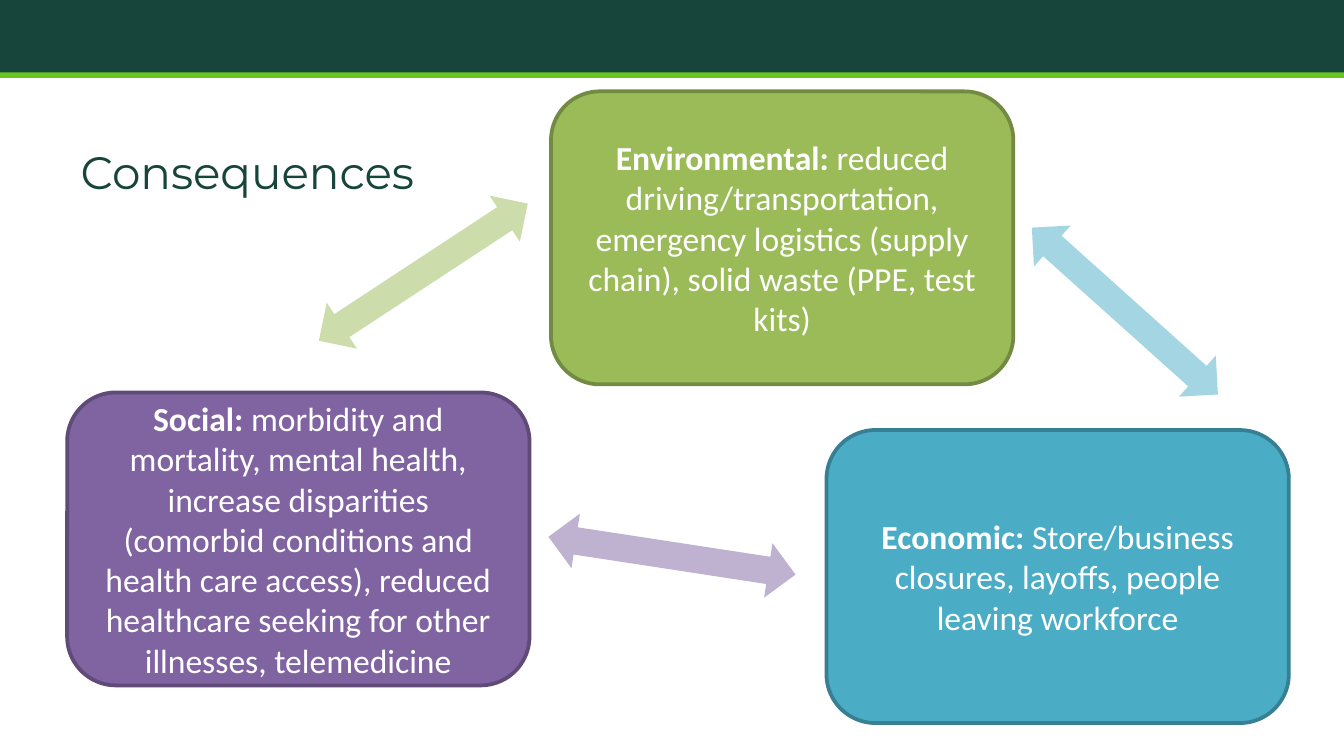
"""Build the slide on linked social, economic and environmental consequences."""
from lxml import etree
from pptx import Presentation
from pptx import util as u
from pptx.dml.color import RGBColor
from pptx.enum import shapes, text
from pptx.oxml.ns import qn

HUES = {
    "dark": "18453B", "lime": "67C521", "white": "FFFFFF",
    "social": "8064A2", "social edge": "5F4A78",
    "money": "4BACC6", "money edge": "377F92",
    "nature": "9BBB59", "nature edge": "738A42",
}
KIND = shapes.MSO_SHAPE
CARDS = [
    ("social", 0.5, 2.92, "Social:",
     " morbidity and mortality, mental health, increase disparities "
     "(comorbid conditions and health care access), reduced healthcare "
     "seeking for other illnesses, telemedicine"),
    ("money", 6.15, 3.2, "Economic:",
     " Store/business closures, layoffs, people leaving workforce"),
    ("nature", 4.1, 0.68, "Environmental:",
     " reduced driving/transportation, emergency logistics (supply chain), "
     "solid waste (PPE, test kits)"),
]
ARROWS = [
    ("social", 4.07, 3.93, 8.7),
    ("money", 7.44, 2.11, 41.9),
    ("nature", 2.22, 1.82, 326.7),
]


class Deck:
    """Hold the style and the current slide."""

    def __init__(self):
        """Start a 16:9 deck with one title-only slide."""
        self.file = Presentation()
        self.file.slide_width = u.Inches(10)
        self.file.slide_height = u.Inches(10) * 9 // 16
        self.slide = self.file.slides.add_slide(self.file.slide_layouts[5])

    def hue(self, name):
        """Look up a colour by name."""
        return RGBColor.from_string(HUES[name])

    def style(self, run, font, size, hue, bold=None):
        """Format one run."""
        run.font.name = font
        run.font.size = u.Pt(size)
        run.font.color.rgb = self.hue(hue)
        run.font.bold = bold

    def shape(self, kind, hue, *box):
        """Add a plain filled shape."""
        item = self.slide.shapes.add_shape(kind, *map(u.Inches, box))
        item.shadow.inherit = False
        item.fill.solid()
        item.fill.fore_color.rgb = self.hue(hue)
        item.line.fill.background()
        return item

    def title(self, words, left, top, width, height):
        """Place and format the slide title."""
        item = self.slide.shapes.title
        item.left, item.top = u.Inches(left), u.Inches(top)
        item.width, item.height = u.Inches(width), u.Inches(height)
        frame = item.text_frame
        frame.text = words
        frame.auto_size = text.MSO_AUTO_SIZE.NONE
        frame.vertical_anchor = text.MSO_ANCHOR.TOP
        line = frame.paragraphs[0]
        line.alignment = text.PP_ALIGN.LEFT
        self.style(line.runs[0], "Montserrat", 24.3, "dark")

    def card(self, hue, left, top, head, body):
        """Add a rounded card with a bold lead-in."""
        item = self.shape(KIND.ROUNDED_RECTANGLE, hue, left, top, 3.44, 2.18)
        item.line.color.rgb = self.hue(hue + " edge")
        item.line.width = u.Pt(2)
        frame = item.text_frame
        frame.word_wrap = True
        frame.vertical_anchor = text.MSO_ANCHOR.MIDDLE
        line = frame.paragraphs[0]
        line.alignment = text.PP_ALIGN.CENTER
        for words, bold in ((head, True), (body, False)):
            run = line.add_run()
            run.text = words
            self.style(run, "Calibri", 18, "white", bold)

    def arrow(self, hue, left, top, turn):
        """Add a half-clear double arrow."""
        item = self.shape(KIND.LEFT_RIGHT_ARROW, hue, left, top, 1.86, 0.41)
        item.rotation = turn
        tint = next(item.element.spPr.iter(qn("a:srgbClr")))
        etree.SubElement(tint, qn("a:alpha")).set("val", "50000")


def main():
    """Draw the slide and save it."""
    deck = Deck()
    deck.shape(KIND.RECTANGLE, "lime", 0, 0.53, 10, 0.05)
    deck.shape(KIND.RECTANGLE, "dark", 0, 0, 10, 0.54)
    deck.title("Consequences", 0.5, 1.02, 9, 0.39)
    for card in CARDS:
        deck.card(*card)
    for arrow in ARROWS:
        deck.arrow(*arrow)
    deck.file.save("out.pptx")


if __name__ == "__main__":
    main()
